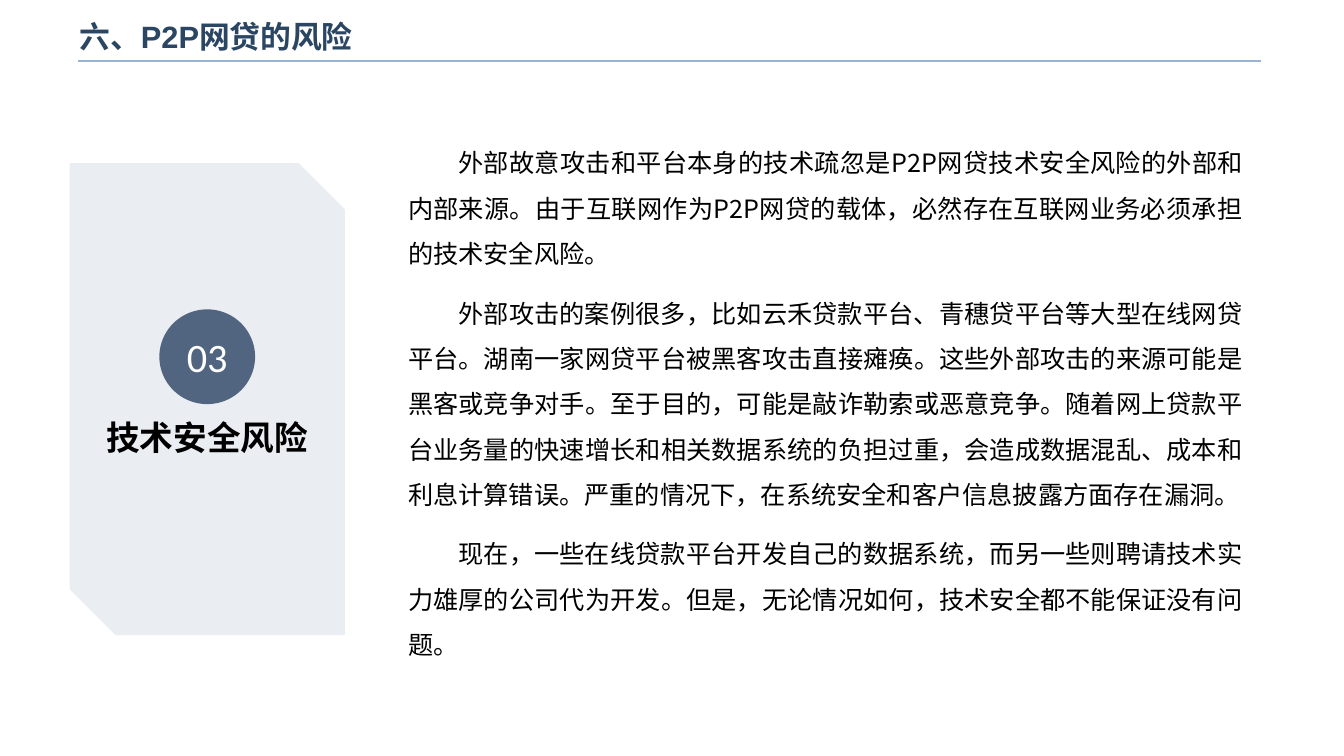
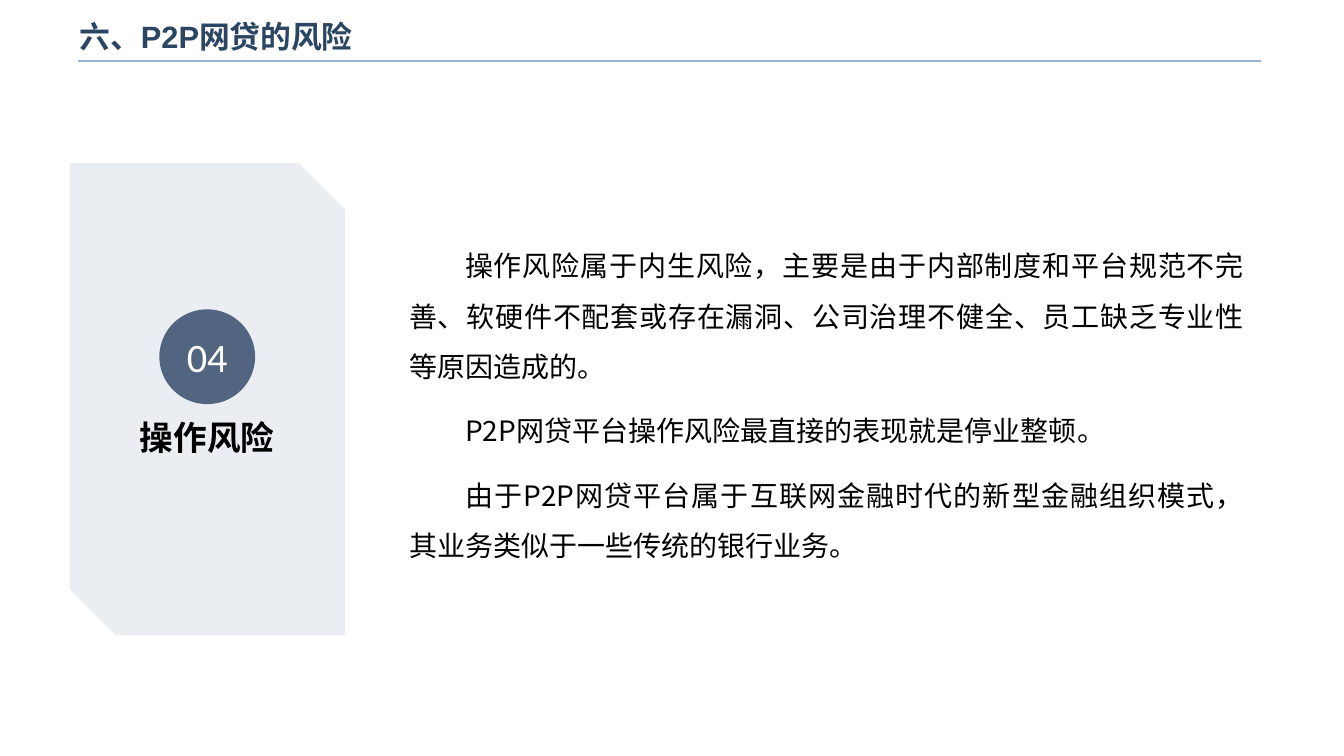
from dataclasses import dataclass

from lxml import etree
from pptx import Presentation
from pptx.dml.color import RGBColor
from pptx.enum.lang import MSO_LANGUAGE_ID
from pptx.enum.shapes import MSO_CONNECTOR, MSO_SHAPE
from pptx.enum.text import MSO_ANCHOR, MSO_AUTO_SIZE, PP_ALIGN
from pptx.oxml.ns import qn
from pptx.shapes.autoshape import Shape
from pptx.slide import Slide
from pptx.util import Pt

LEFT, CENTER, JUSTIFY = PP_ALIGN.LEFT, PP_ALIGN.CENTER, PP_ALIGN.JUSTIFY
TOP, MIDDLE = MSO_ANCHOR.TOP, MSO_ANCHOR.MIDDLE
GROW, FIXED = MSO_AUTO_SIZE.SHAPE_TO_FIT_TEXT, MSO_AUTO_SIZE.NONE
SNIPPED, OVAL = MSO_SHAPE.SNIP_2_DIAG_RECTANGLE, MSO_SHAPE.OVAL
STRAIGHT = MSO_CONNECTOR.STRAIGHT
CHINESE = MSO_LANGUAGE_ID.SIMPLIFIED_CHINESE

COLORS = {
    "title": "2B4663",
    "rule": "98B4D2",
    "panel": "EAEEF2",
    "badge": "526580",
    "text": "000000",
    "white": "FFFFFF",
}
CJK_FONT = "Noto Sans CJK SC"
TITLE = "六、P2P网贷的风险"
BODY_CENTER_Y = 284.9
BODY_WIDTH = 610.5


@dataclass(frozen=True)
class Box:
    left: float
    top: float
    width: float
    height: float

    def emu(self) -> tuple[Pt, Pt, Pt, Pt]:
        return Pt(self.left), Pt(self.top), Pt(self.width), Pt(self.height)


@dataclass(frozen=True)
class Risk:
    number: str
    name: str
    body_left: float
    body_height: float
    body_size: float
    paragraphs: tuple[str, ...]


TITLE_BOX = Box(49.7, 6.5, 771, 38.2)
PANEL_BOX = Box(49.7, 116.6, 196.6, 337)
NAME_BOX = Box(33.1, 294.5, 229.7, 36)
BADGE_BOX = Box(113.8, 221, 68.4, 67.7)

RISKS = (
    Risk("03", "技术安全风险", 284.4, 387.4, 18, (
        "外部故意攻击和平台本身的技术疏忽是P2P网贷技术安全风险的外部和内部来源。"
        "由于互联网作为P2P网贷的载体，必然存在互联网业务必须承担的技术安全风险。",
        "外部攻击的案例很多，比如云禾贷款平台、青穗贷平台等大型在线网贷平台。"
        "湖南一家网贷平台被黑客攻击直接瘫痪。这些外部攻击的来源可能是黑客或竞争对手。"
        "至于目的，可能是敲诈勒索或恶意竞争。"
        "随着网上贷款平台业务量的快速增长和相关数据系统的负担过重，"
        "会造成数据混乱、成本和利息计算错误。"
        "严重的情况下，在系统安全和客户信息披露方面存在漏洞。",
        "现在，一些在线贷款平台开发自己的数据系统，而另一些则聘请技术实力雄厚的公司代为开发。"
        "但是，无论情况如何，技术安全都不能保证没有问题。",
    )),
    Risk("04", "操作风险", 285.1, 245.5, 20, (
        "操作风险属于内生风险，主要是由于内部制度和平台规范不完善、"
        "软硬件不配套或存在漏洞、公司治理不健全、员工缺乏专业性等原因造成的。",
        "P2P网贷平台操作风险最直接的表现就是停业整顿。",
        "由于P2P网贷平台属于互联网金融时代的新型金融组织模式，"
        "其业务类似于一些传统的银行业务。",
    )),
)


def color(name: str) -> RGBColor:
    return RGBColor.from_string(COLORS[name])


def write_text(shape: Shape, *paragraphs: str, size: float, font: str = CJK_FONT,
               ink: str = "text", bold: bool = False, align: PP_ALIGN = LEFT,
               anchor: MSO_ANCHOR = TOP, fit: MSO_AUTO_SIZE = FIXED,
               indent: float = 0, line_spacing: float = 1, space_after: float = 0) -> None:
    frame = shape.text_frame
    frame.word_wrap = True
    frame.auto_size = fit
    frame.vertical_anchor = anchor
    for index, content in enumerate(paragraphs):
        paragraph = frame.add_paragraph() if index else frame.paragraphs[0]
        paragraph.alignment = align
        paragraph.line_spacing = line_spacing
        paragraph.space_after = Pt(space_after)
        properties = paragraph._p.get_or_add_pPr()
        properties.set("marL", "0")
        properties.set("indent", str(Pt(indent)))
        run = paragraph.add_run()
        run.text = content
        run.font.size = Pt(size)
        run.font.bold = bold
        run.font.name = font
        run.font.language_id = CHINESE
        run.font.color.rgb = color(ink)
        east_asian = etree.SubElement(run._r.get_or_add_rPr(), qn("a:ea"))
        east_asian.set("typeface", CJK_FONT)


def add_filled(slide: Slide, kind: MSO_SHAPE, box: Box, fill: str) -> Shape:
    shape = slide.shapes.add_shape(kind, *box.emu())
    shape.shadow.inherit = False
    shape.fill.solid()
    shape.fill.fore_color.rgb = color(fill)
    shape.line.fill.background()
    return shape


def add_heading(slide: Slide) -> None:
    rule = slide.shapes.add_connector(STRAIGHT, Pt(55.4), Pt(43.5), Pt(900.7), Pt(43.5))
    rule.line.color.rgb = color("rule")
    rule.line.width = Pt(1)
    etree.SubElement(rule._element.spPr, qn("a:effectLst"))
    title = slide.shapes.add_textbox(*TITLE_BOX.emu())
    write_text(title, TITLE, size=22, font="Arial", ink="title", bold=True, anchor=MIDDLE)


def add_risk(slide: Slide, risk: Risk) -> None:
    add_heading(slide)
    add_filled(slide, SNIPPED, PANEL_BOX, "panel")
    name = slide.shapes.add_textbox(*NAME_BOX.emu())
    write_text(name, risk.name, size=24, bold=True, align=CENTER, fit=GROW)
    body_box = Box(risk.body_left, BODY_CENTER_Y - risk.body_height / 2,
                   BODY_WIDTH, risk.body_height)
    body = slide.shapes.add_textbox(*body_box.emu())
    write_text(body, *risk.paragraphs, size=risk.body_size, align=JUSTIFY, fit=GROW,
               indent=2 * risk.body_size, line_spacing=1.5, space_after=10)
    badge = add_filled(slide, OVAL, BADGE_BOX, "badge")
    write_text(badge, risk.number, size=28.8, font="Calibri", ink="white",
               align=CENTER, anchor=MIDDLE)


def main() -> None:
    deck = Presentation()
    deck.slide_width, deck.slide_height = Pt(960), Pt(540)
    blank = deck.slide_layouts[6]
    for risk in RISKS:
        add_risk(deck.slides.add_slide(blank), risk)
    deck.save("out.pptx")


if __name__ == "__main__":
    main()
